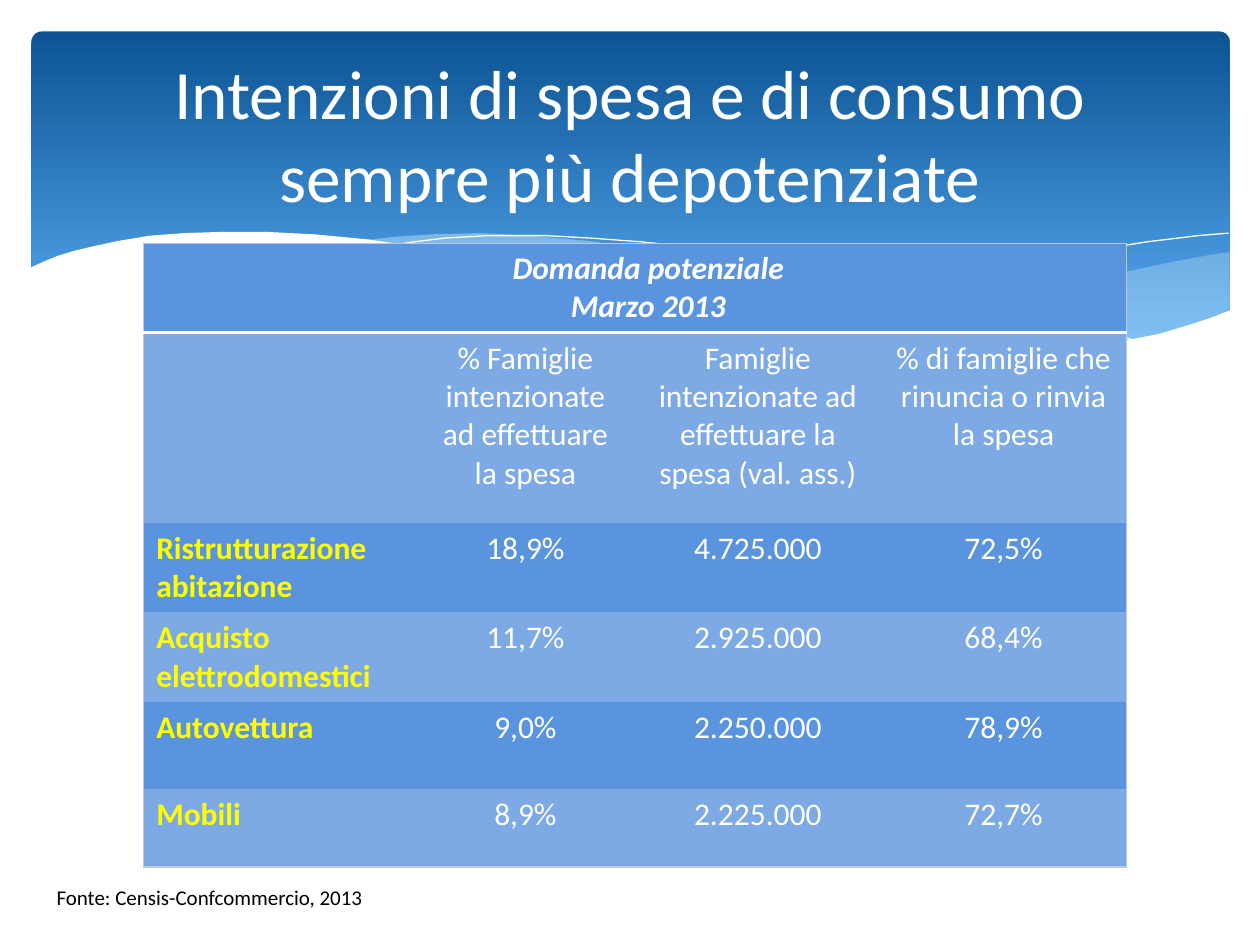
"""Build a slide with a wave banner, a title and a table of spending plans."""
from dataclasses import dataclass
from typing import Optional

from lxml import etree
from pptx import Presentation
from pptx import util as u
from pptx.dml import color
from pptx.enum import shapes, text
from pptx.oxml import ns

COLS, ROWS = 100, 75
CELL = u.Inches(0.1)
FONT = "Calibri"
HUES = {
    "white": "FFFFFF", "black": "000000", "label": "FFFF00", "deep": "0B5394",
    "sky": "59AAF2", "mist": "DBF5F9", "dark": "5B94DE", "light": "7DA9E5",
    "edge": "BDC8E5",
}


@dataclass
class Wave:
    """Outline in grid units, filled when closed and stroked when open."""
    hue: str
    points: list
    alpha: Optional[int] = None
    closed: bool = True


@dataclass
class Style:
    """Look of a run of text."""
    size: float = 18
    hue: str = "white"
    bold: bool = False
    slant: bool = False
    align: text.PP_ALIGN = text.PP_ALIGN.CENTER


WAVES = [
    Wave("mist", [
        (97.6, 20), (96.2, 20.2), (93.5, 20.7), (90.6, 21.3), (86.1, 22.3),
        (80.5, 23.7), (75.3, 24.8), (70.6, 25.7), (66.1, 26.5), (69.1, 26.9),
        (73.2, 27.4), (76.9, 27.7), (80.3, 27.8), (83.5, 27.7), (87.2, 27.4),
        (90.5, 26.9), (93.5, 26.2), (96.3, 25.2), (97.6, 24.7)], 29),
    Wave("mist", [
        (89.3, 27.3), (83.7, 26.5), (77.5, 25.4), (70.6, 24), (62.9, 22.2),
        (58.4, 21.1), (54.1, 20.3), (50.2, 19.6), (46.5, 19.1), (42, 18.7),
        (38, 18.5), (34.4, 18.6), (31.3, 18.8), (28.6, 19.1), (32.3, 19.6),
        (36.2, 20.3), (40.4, 21.1), (44.9, 22.2), (53, 24), (60.1, 25.5),
        (66.5, 26.6), (72.2, 27.4), (77.3, 27.7), (81.8, 27.8), (85.7, 27.7)],
        40),
    Wave("white", [
        (30.9, 19.5), (32.8, 19.2), (35.3, 18.9), (38.7, 18.7), (43.3, 18.7),
        (46.9, 18.9), (51, 19.2), (55.6, 19.7), (60.8, 20.4), (66.5, 21.3),
        (72.7, 22.6), (79.5, 24.1), (86.9, 26.1), (90.7, 27.2)], None, False),
    Wave("white", [
        (61.3, 25.7), (65.3, 24.6), (69.5, 23.5), (74.8, 22.3), (80.6, 21),
        (86.6, 19.9), (91, 19.2), (95.1, 18.7), (97.5, 18.5)], None, False),
    Wave("white", [
        (97.7, 24.6), (95.9, 25.3), (94, 25.9), (92, 26.5), (89.9, 26.9),
        (87.5, 27.3), (85, 27.5), (82.3, 27.7), (79.3, 27.6), (76.1, 27.5),
        (72.6, 27.2), (68.8, 26.8), (64.8, 26.2), (60.3, 25.4), (55.5, 24.5),
        (50.3, 23.3), (44.7, 22), (39.1, 20.7), (34, 19.7), (29.2, 19),
        (25, 18.6), (21.1, 18.4), (17.7, 18.4), (14.6, 18.5), (11.9, 18.7),
        (9.5, 19.1), (7.6, 19.5), (5.9, 19.9), (4.6, 20.3), (3.6, 20.7),
        (2.3, 21.3), (2.3, 32.9), (97.7, 32.9)]),
]
WIDTHS = [21.6, 17.4, 19.5, 19.5]
HEIGHTS = [6.6, 15.1, 7.1, 7.1, 6.9, 6.2]
DATA = [
    ["", "Domanda potenziale\nMarzo 2013", "", ""],
    ["", "% Famiglie intenzionate ad effettuare la spesa",
     "Famiglie intenzionate ad effettuare la spesa (val. ass.)",
     "% di famiglie che rinuncia o rinvia la spesa"],
    ["Ristrutturazione abitazione", "18,9%", "4.725.000", "72,5%"],
    ["Acquisto elettrodomestici", "11,7%", "2.925.000", "68,4%"],
    ["Autovettura", "9,0%", "2.250.000", "78,9%"],
    ["Mobili", "8,9%", "2.225.000", "72,7%"],
]
HEAD = Style(bold=True, slant=True)
LABEL = Style(hue="label", bold=True, align=text.PP_ALIGN.LEFT)
BODY = Style()


def grid(*units: float) -> list:
    """Turn grid units into lengths."""
    return [u.Emu(round(n * CELL)) for n in units]


def rgb(name: str) -> color.RGBColor:
    """Look up a colour by name."""
    return color.RGBColor.from_string(HUES[name])


def write(frame, words: str, style: Style) -> None:
    """Put styled words in a text frame."""
    frame.text = words
    for para in frame.paragraphs:
        para.alignment = style.align
        for run in para.runs:
            font = run.font
            font.name, font.size = FONT, u.Pt(style.size)
            font.bold, font.italic = style.bold, style.slant
            font.color.rgb = rgb(style.hue)


def draw_sky(slide) -> None:
    """Draw the rounded gradient banner."""
    sky = slide.shapes.add_shape(
        shapes.MSO_SHAPE.ROUNDED_RECTANGLE, *grid(2.5, 2.5, COLS - 4.9, 27))
    sky.adjustments[0] = 0.03
    sky.shadow.inherit = False
    sky.line.fill.background()
    sky.fill.gradient()
    sky.fill.gradient_angle = 270
    for stop, name, place in zip(sky.fill.gradient_stops, ("deep", "sky"), (0, 0.9)):
        stop.color.rgb, stop.position = rgb(name), place


def draw_wave(slide, wave: Wave) -> None:
    """Draw one wave outline."""
    spots = [grid(*spot) for spot in wave.points]
    pen = slide.shapes.build_freeform(*spots[0])
    pen.add_line_segments(spots[1:], close=wave.closed)
    form = pen.convert_to_shape()
    form.shadow.inherit = False
    if not wave.closed:
        form.fill.background()
        form.line.color.rgb, form.line.width = rgb(wave.hue), u.Pt(0)
        return
    form.line.fill.background()
    form.fill.solid()
    form.fill.fore_color.rgb = rgb(wave.hue)
    if wave.alpha:
        tint = form.fill._xPr.find(".//" + ns.qn("a:srgbClr"))
        etree.SubElement(tint, ns.qn("a:alpha"), val=str(wave.alpha * 1000))


def rule(cell, side: str, name: str, width: float) -> None:
    """Draw one border of a cell."""
    line = etree.SubElement(cell._tc.get_or_add_tcPr(), ns.qn("a:ln" + side),
                            w=str(u.Pt(width)))
    fill = etree.SubElement(line, ns.qn("a:solidFill"))
    etree.SubElement(fill, ns.qn("a:srgbClr"), val=HUES[name])


def draw_table(slide) -> None:
    """Draw the banded table with its outer frame."""
    last, end = len(DATA) - 1, len(WIDTHS) - 1
    table = slide.shapes.add_table(
        len(DATA), len(WIDTHS),
        *grid(11.4, 19.3, sum(WIDTHS), sum(HEIGHTS))).table
    table.first_row = table.horz_banding = False
    style = table._tbl.tblPr.find(ns.qn("a:tableStyleId"))
    style.text = "{2D5ABB26-0587-4C30-8999-92F81FD0307C}"
    for col, width in zip(table.columns, grid(*WIDTHS)):
        col.width = width
    for row, height in zip(table.rows, grid(*HEIGHTS)):
        row.height = height
    table.cell(0, 1).merge(table.cell(0, 2))
    for r, line in enumerate(DATA):
        for c, words in enumerate(line):
            cell = table.cell(r, c)
            if words:
                look = HEAD if r == 0 else LABEL if c == 0 else BODY
                write(cell.text_frame, words, look)
            edges = {"L": c == 0, "R": c == end, "T": r == 0, "B": r == last}
            for side, outer in edges.items():
                if outer:
                    rule(cell, side, "edge", 0.75)
                elif r == 0 and side == "B":
                    rule(cell, side, "white", 2)
            cell.fill.solid()
            cell.fill.fore_color.rgb = rgb("light" if r % 2 else "dark")


def main() -> None:
    """Build and save the slide."""
    deck = Presentation()
    deck.slide_width, deck.slide_height = grid(COLS, ROWS)
    slide = deck.slides.add_slide(deck.slide_layouts[5])
    draw_sky(slide)
    for wave in WAVES:
        draw_wave(slide, wave)
    title = slide.shapes.title
    slide.shapes._spTree.append(title._element)
    title.left, title.top, title.width, title.height = grid(5, 3.7, 90, 13.7)
    frame = title.text_frame
    write(frame, "Intenzioni di spesa e di consumo sempre più depotenziate", Style(39.6))
    frame.word_wrap = True
    frame.auto_size = text.MSO_AUTO_SIZE.NONE
    frame.vertical_anchor = text.MSO_ANCHOR.MIDDLE
    draw_table(slide)
    note = slide.shapes.add_textbox(*grid(3.5, 69.7, 33.9, 3)).text_frame
    note.word_wrap = True
    write(note, "Fonte: Censis-Confcommercio, 2013",
          Style(12, "black", align=text.PP_ALIGN.LEFT))
    deck.save("out.pptx")


if __name__ == "__main__":
    main()
